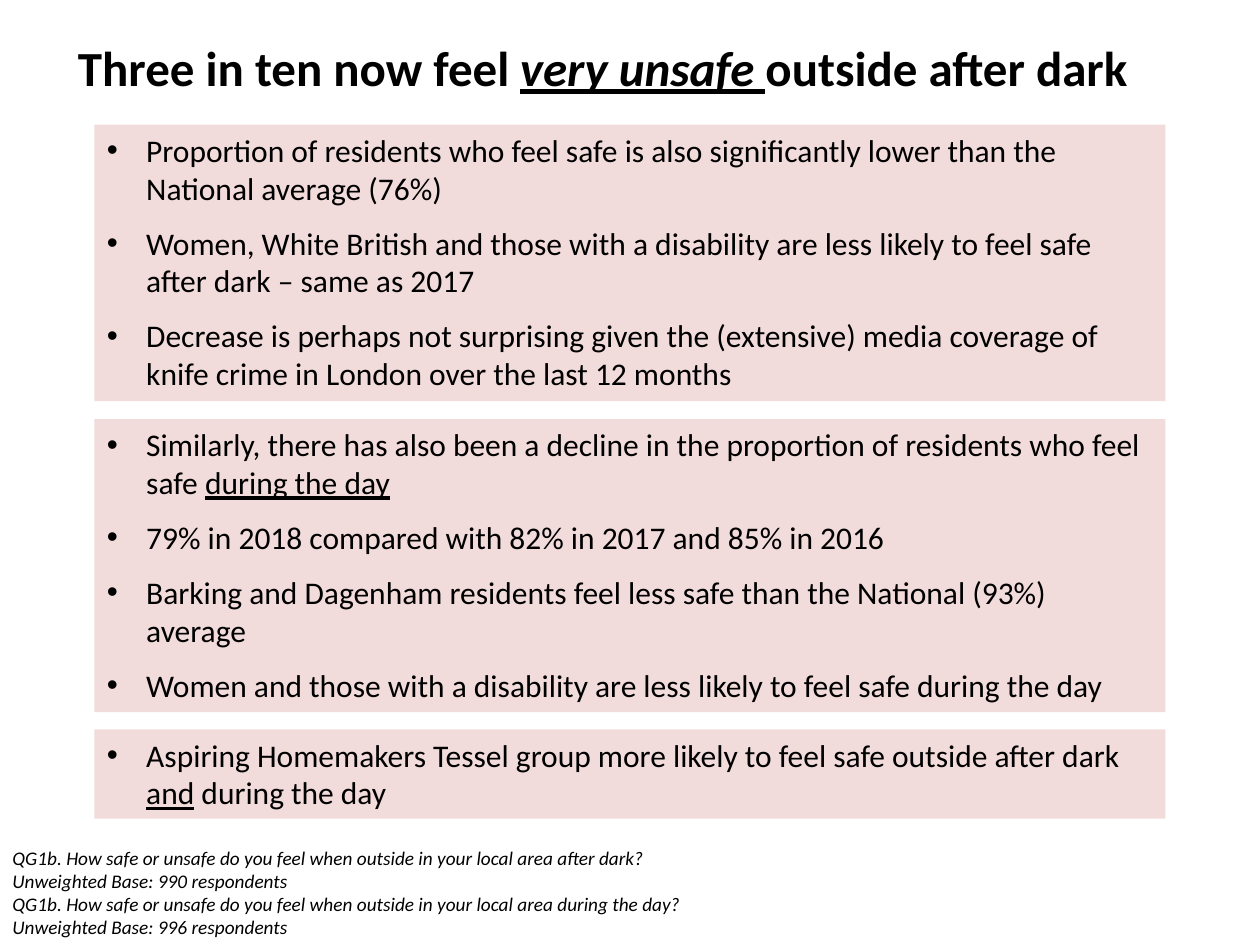
from pptx import Presentation
from pptx.dml.color import RGBColor
from pptx.enum import shapes, text
from pptx.oxml import parse_xml
from pptx.oxml.ns import nsdecls
from pptx.util import Pt

BLACK = RGBColor(0, 0, 0)
PINK = RGBColor(0xF2, 0xDC, 0xDB)


def write(para, words, size=18, bold=False, italic=False, under=False):
    run = para.add_run()
    run.text = words
    font = run.font
    font.name, font.size = "Calibri", Pt(size)
    font.bold, font.italic, font.underline = bold, italic, under
    font.color.rgb = BLACK


def add_para(frame, first, gap=0, bullet=False):
    para = frame.paragraphs[0] if first else frame.add_paragraph()
    para.alignment = text.PP_ALIGN.LEFT
    if not first:
        para.space_before = Pt(gap)
    if bullet:
        props = para._p.get_or_add_pPr()
        props.set("marL", str(Pt(22.5)))
        props.set("indent", str(Pt(-22.5)))
        props.append(parse_xml(f'<a:buFont {nsdecls("a")} typeface="Arial"/>'))
        props.append(parse_xml(f'<a:buChar {nsdecls("a")} char="•"/>'))
    return para


prs = Presentation()
prs.slide_width, prs.slide_height = Pt(720), Pt(540)
slide = prs.slides.add_slide(prs.slide_layouts[6])

title = slide.shapes.add_textbox(Pt(37.5), Pt(16), Pt(664), Pt(45)).text_frame
title.word_wrap = True
title.vertical_anchor = text.MSO_ANCHOR.MIDDLE
head = add_para(title, True)
write(head, "Three in ten now feel ", size=28, bold=True)
write(head, "very unsafe ", size=28, bold=True, italic=True, under=True)
write(head, "outside after dark", size=28, bold=True)

panels = [
    (71.25, 158, [
        ["Proportion of residents who feel safe is also significantly lower than the National average (76%)"],
        ["Women, White British and those with a disability are less likely to feel safe after dark – same as 2017"],
        ["Decrease is perhaps not surprising given the (extensive) media coverage of knife crime in London over the last 12 months"],
    ]),
    (239.5, 167.5, [
        ["Similarly, there has also been a decline in the proportion of residents who feel safe ", "during the day"],
        ["79% in 2018 compared with 82% in 2017 and 85% in 2016"],
        ["Barking and Dagenham residents feel less safe than the National (93%) average"],
        ["Women and those with a disability are less likely to feel safe during the day"],
    ]),
    (416.75, 51, [
        ["Aspiring Homemakers Tessel group more likely to feel safe outside after dark ", "and", " during the day"],
    ]),
]
for top, high, points in panels:
    panel = slide.shapes.add_shape(shapes.MSO_SHAPE.RECTANGLE, Pt(54), Pt(top), Pt(612), Pt(high))
    panel.shadow.inherit = False
    panel.fill.solid()
    panel.fill.fore_color.rgb = PINK
    panel.line.fill.background()
    frame = panel.text_frame
    frame.word_wrap = True
    frame.vertical_anchor = text.MSO_ANCHOR.TOP
    for i, parts in enumerate(points):
        para = add_para(frame, i == 0, gap=9.75, bullet=True)
        for j, words in enumerate(parts):
            write(para, words, under=j == 1)

notes = slide.shapes.add_textbox(Pt(0), Pt(480), Pt(603), Pt(60.5)).text_frame
notes.word_wrap = True
lines = [
    "QG1b. How safe or unsafe do you feel when outside in your local area after dark?",
    "Unweighted Base: 990 respondents",
    "QG1b. How safe or unsafe do you feel when outside in your local area during the day?",
    "Unweighted Base: 996 respondents",
]
for i, words in enumerate(lines):
    write(add_para(notes, i == 0), words, size=11, italic=True)

prs.save("out.pptx")
